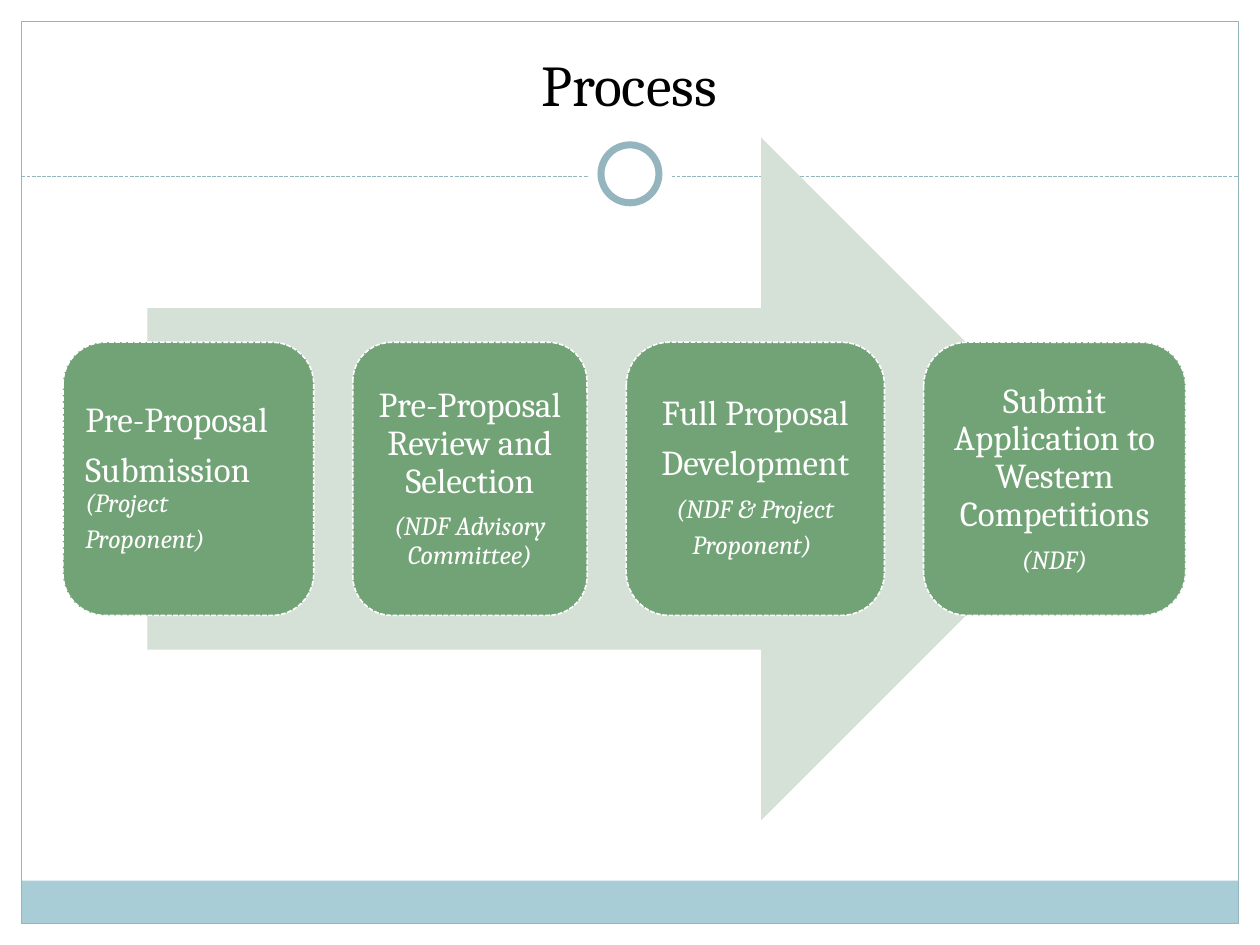
from pptx import Presentation
from pptx.dml.color import RGBColor
from pptx.enum.dml import MSO_LINE_DASH_STYLE as Dash
from pptx.enum.shapes import MSO_CONNECTOR, MSO_SHAPE
from pptx.enum.text import MSO_ANCHOR, PP_ALIGN
from pptx.oxml.ns import qn
from pptx.util import Inches, Pt
from lxml import etree

FONT = "Cambria"
WHITE, BLACK = "FFFFFF", "000000"
FRAME_BLUE, BAND_BLUE = "94B5BE", "A8CDD7"
ARROW_GREEN, STEP_GREEN = "D5E0D6", "72A376"
STEP_GAP = 0.31

# Each step: width, alignment, paragraphs of (text, size, italic) runs.
# A closing tab at full size keeps the last line of a wrapped note open.
STEPS = [
    (1.99, PP_ALIGN.LEFT, [
        [("Pre-Proposal", 20, False)],
        [("Submission ", 20, False), ("(Project Proponent)", 15, True), ("\t", 20, False)],
    ]),
    (1.86, PP_ALIGN.CENTER, [
        [("Pre-Proposal Review and Selection", 20, False)],
        [("(NDF Advisory Committee)", 15, True)],
    ]),
    (2.05, PP_ALIGN.CENTER, [
        [("Full Proposal", 20, False)],
        [("Development", 20, False)],
        [("(NDF & Project Proponent)", 15, True), ("\t", 20, False)],
    ]),
    (2.08, PP_ALIGN.CENTER, [
        [("Submit Application to Western Competitions", 20, False)],
        [("(NDF)", 15, True)],
    ]),
]


def color(value):
    return RGBColor.from_string(value)


def style_line(line, value, width, dash=None):
    line.color.rgb = color(value)
    line.width = Pt(width)
    if dash is not None:
        line.dash_style = dash


def add_preset(slide, kind, left, top, width, height, fill=None):
    """Add a flat preset shape without an outline."""
    shape = slide.shapes.add_shape(
        kind, Inches(left), Inches(top), Inches(width), Inches(height))
    shape.shadow.inherit = False
    if fill:
        shape.fill.solid()
        shape.fill.fore_color.rgb = color(fill)
    else:
        shape.fill.background()
    shape.line.fill.background()
    return shape


def add_run(paragraph, text, size, value, italic=False):
    run = paragraph.add_run()
    run.text = text
    run.font.name = FONT
    run.font.size = Pt(size)
    run.font.italic = italic
    run.font.color.rgb = color(value)


def add_circle(slide, center_x, center_y, diameter):
    return add_preset(slide, MSO_SHAPE.OVAL, center_x - diameter / 2,
                      center_y - diameter / 2, diameter, diameter, WHITE)


def add_frame(slide, left, top, width, height):
    """Border, bottom band, and dashed divider broken by a ring."""
    band_height = 0.34
    add_preset(slide, MSO_SHAPE.RECTANGLE, left, top + height - band_height,
               width, band_height, BAND_BLUE)
    border = add_preset(slide, MSO_SHAPE.RECTANGLE, left, top, width, height)
    style_line(border.line, FRAME_BLUE, 0.75)

    divider_y = top + 1.23
    divider = slide.shapes.add_connector(
        MSO_CONNECTOR.STRAIGHT, Inches(left), Inches(divider_y),
        Inches(left + width), Inches(divider_y))
    style_line(divider.line, FRAME_BLUE, 0.75, Dash.SQUARE_DOT)
    etree.SubElement(divider._element.spPr, qn("a:effectLst"))

    center_x, center_y = left + width / 2, divider_y - 0.02
    add_circle(slide, center_x, center_y, 0.67)
    ring = add_circle(slide, center_x, center_y, 0.46)
    style_line(ring.line, FRAME_BLUE, 4)


def set_title(slide, text, left, top, width, height):
    title = slide.shapes.title
    title.left, title.top = Inches(left), Inches(top)
    title.width, title.height = Inches(width), Inches(height)
    title.text_frame.vertical_anchor = MSO_ANCHOR.MIDDLE
    paragraph = title.text_frame.paragraphs[0]
    paragraph.alignment = PP_ALIGN.CENTER
    add_run(paragraph, text, 33, BLACK)


def add_step(slide, left, top, width, height, alignment, paragraphs):
    step = add_preset(slide, MSO_SHAPE.ROUNDED_RECTANGLE,
                      left, top, width, height, STEP_GREEN)
    style_line(step.line, WHITE, 0.9, Dash.SQUARE_DOT)
    frame = step.text_frame
    frame.word_wrap = True
    frame.vertical_anchor = MSO_ANCHOR.MIDDLE
    frame.margin_left = frame.margin_right = Inches(0.08)
    frame.margin_top = frame.margin_bottom = Inches(0.08)
    for index, runs in enumerate(paragraphs):
        paragraph = frame.add_paragraph() if index else frame.paragraphs[0]
        paragraph.alignment = alignment
        paragraph.line_spacing = 0.9
        paragraph.space_after = Pt(7)
        for text, size, italic in runs:
            add_run(paragraph, text, size, WHITE, italic)


def add_process(slide, left, top, width, height):
    """Broad arrow with the steps in a row across its middle."""
    add_preset(slide, MSO_SHAPE.RIGHT_ARROW, left + 0.67, top,
               width - 2 * 0.67, height, ARROW_GREEN)
    step_height = height * 0.4
    step_top = top + (height - step_height) / 2
    step_left = left
    for step_width, alignment, paragraphs in STEPS:
        add_step(slide, step_left, step_top, step_width, step_height,
                 alignment, paragraphs)
        step_left += step_width + STEP_GAP


def main():
    presentation = Presentation()
    presentation.slide_width = Inches(10)
    presentation.slide_height = Inches(7.5)
    slide = presentation.slides.add_slide(presentation.slide_layouts[5])
    add_frame(slide, 0.17, 0.17, 9.66, 7.16)
    set_title(slide, "Process", 0.33, 0.25, 9.33, 0.83)
    add_process(slide, 0.5, 1.09, 8.92, 5.42)
    presentation.save("out.pptx")


if __name__ == "__main__":
    main()
